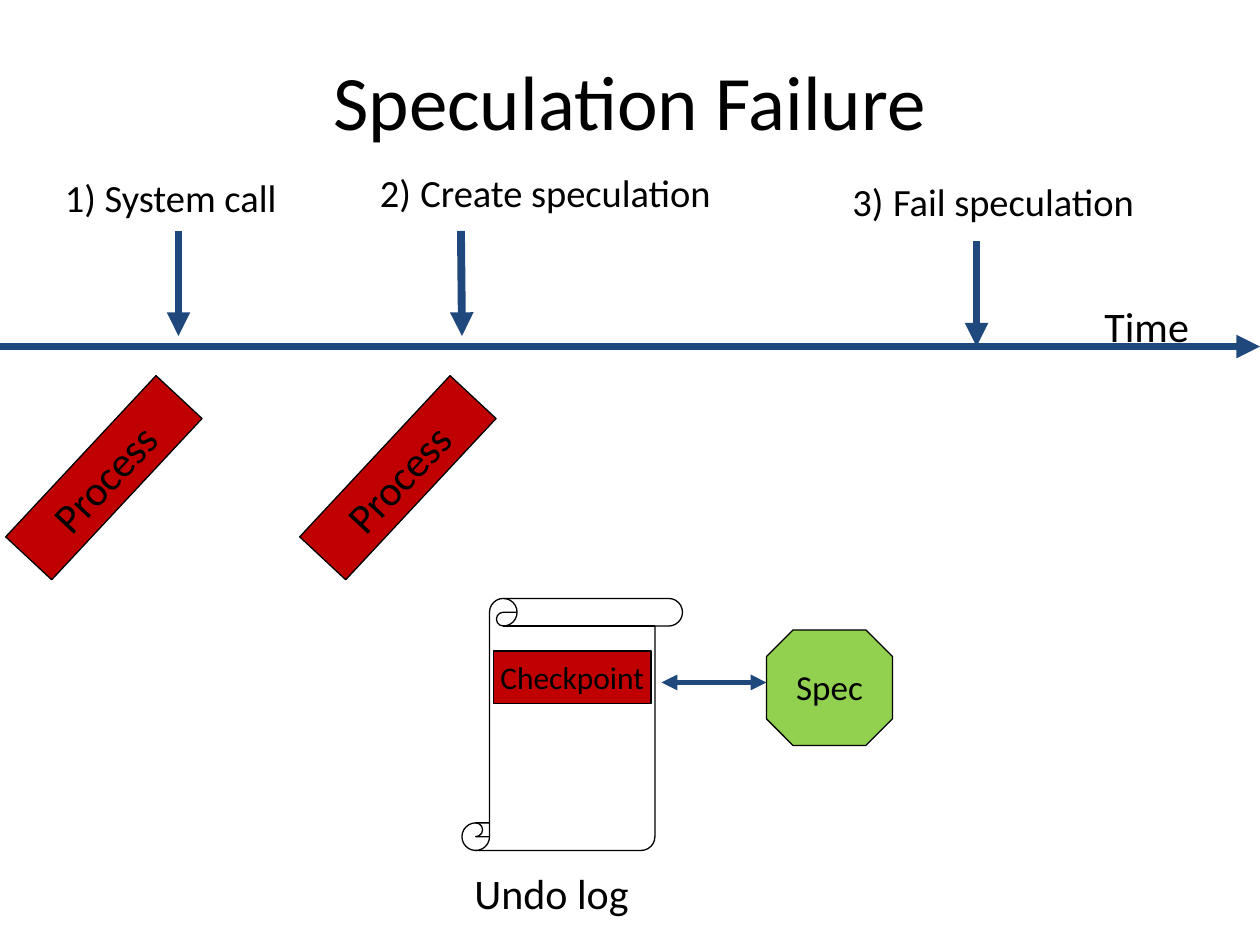
from lxml.etree import SubElement
from pptx import Presentation
from pptx.dml.color import RGBColor
from pptx.enum.shapes import MSO_CONNECTOR, MSO_SHAPE as Preset
from pptx.enum.text import MSO_ANCHOR as Anchor, MSO_AUTO_SIZE as AutoSize, PP_ALIGN as Align
from pptx.oxml.ns import qn
from pptx.util import Inches, Pt

BLACK = RGBColor(0x00, 0x00, 0x00)
NAVY = RGBColor(0x1F, 0x49, 0x7D)
RED = RGBColor(0xC0, 0x00, 0x00)
GREEN = RGBColor(0x92, 0xD0, 0x50)
FONT = "Calibri"
CELL = Inches(1) / 12  # the slide is a grid of 120 columns by 90 rows


def write(shape, pieces, align=Align.LEFT, anchor=Anchor.TOP, before=0):
    """Fill a shape with one paragraph of (text, size) pieces."""
    frame = shape.text_frame
    frame.word_wrap = True
    frame.vertical_anchor = anchor
    paragraph = frame.paragraphs[0]
    paragraph.alignment = align
    paragraph.space_before = Pt(before)
    paragraph.font.name = FONT
    paragraph.font.color.rgb = BLACK
    paragraph.font.size = Pt(pieces[0][1])
    for text, size in pieces:
        run = paragraph.add_run()
        run.text = text
        if size != pieces[0][1]:
            run.font.size = Pt(size)


def arrow(start, end, width, ends):
    """Draw a straight arrow between two grid points."""
    points = [round(value * CELL) for value in (*start, *end)]
    line = slide.shapes.add_connector(MSO_CONNECTOR.STRAIGHT, *points)
    line.line.color.rgb = NAVY
    line.line.width = Pt(width)
    properties = line._element.spPr
    for end_name in ends:
        SubElement(properties.find(qn("a:ln")), qn(f"a:{end_name}"), type="triangle")
    SubElement(properties, qn("a:effectLst"))


prs = Presentation()
prs.slide_width, prs.slide_height = Inches(10), Inches(7.5)
slide = prs.slides.add_slide(prs.slide_layouts[5])

# Title
title = slide.shapes.title
title.left, title.top, title.width, title.height = [round(v * CELL) for v in (6, 2, 108, 15)]
write(title, [("Speculation Failure", 44)], Align.CENTER, Anchor.MIDDLE)

# Timeline and the arrows of its three events
arrow((0, 33), (120, 33), 4.5, ["tailEnd"])
for bottom, top in [((17, 32), (17, 22)), ((44, 32), (43.9, 22)), ((93, 33), (93, 23))]:
    arrow(bottom, top, 4.5, ["headEnd"])

# Undo log, checkpoint, processes and speculation
undo_log = slide.shapes.add_group_shape().shapes
speculation = slide.shapes.add_group_shape().shapes
blocks = [
    (undo_log, Preset.VERTICAL_SCROLL, (44, 57, 21, 24), None, 0, None),
    (slide.shapes, Preset.RECTANGLE, (47, 62, 15, 5), RED, 0, ("Checkpoint", 18)),
    (slide.shapes, Preset.RECTANGLE, (27.4, 42.5, 21, 6), RED, 313, ("Process", 24)),
    (slide.shapes, Preset.RECTANGLE, (-0.6, 42.5, 21, 6), RED, 313, ("Process", 24)),
    (speculation, Preset.OCTAGON, (73, 60, 12, 11), GREEN, 0, None),
]
for parent, preset, place, fill, rotation, label in blocks:
    block = parent.add_shape(preset, *[round(v * CELL) for v in place])
    block.shadow.inherit = False
    block.rotation = rotation
    block.line.color.rgb = BLACK
    block.line.width = Pt(0.75)
    if fill:
        block.fill.solid()
        block.fill.fore_color.rgb = fill
    else:
        block.fill.background()
    if preset == Preset.OCTAGON:
        block.adjustments[0] = 0.23
    if label:
        write(block, [label], Align.CENTER, Anchor.TOP if rotation else Anchor.MIDDLE,
              15 if rotation else 0)
        block.text_frame.word_wrap = bool(rotation)

# Link between checkpoint and speculation
arrow((73, 65), (63, 65), 3, ["headEnd", "tailEnd"])

# Captions
captions = [
    (slide.shapes, (5, 16, 46, 5.6), [("1) System call", 22)], Align.LEFT, 13.8),
    (slide.shapes, (35, 15.2, 47, 6),
     [("2)", 22), (" ", 24), ("Create speculation", 22)], Align.LEFT, 13.8),
    (slide.shapes, (80, 16, 69, 6),
     [("3)", 22), (" ", 24), ("Fail speculation", 22)], Align.LEFT, 13.8),
    (slide.shapes, (104, 28, 20, 6), [("Time", 24)], Align.LEFT, 15),
    (undo_log, (44, 82, 22, 6), [("Undo log", 24)], Align.LEFT, 15),
    (speculation, (68, 62.75, 22, 5.25), [("Spec", 20)], Align.CENTER, 12.5),
]
for parent, place, pieces, align, before in captions:
    caption = parent.add_textbox(*[round(v * CELL) for v in place])
    write(caption, pieces, align, before=before)
    caption.text_frame.auto_size = AutoSize.SHAPE_TO_FIT_TEXT

prs.save("out.pptx")
